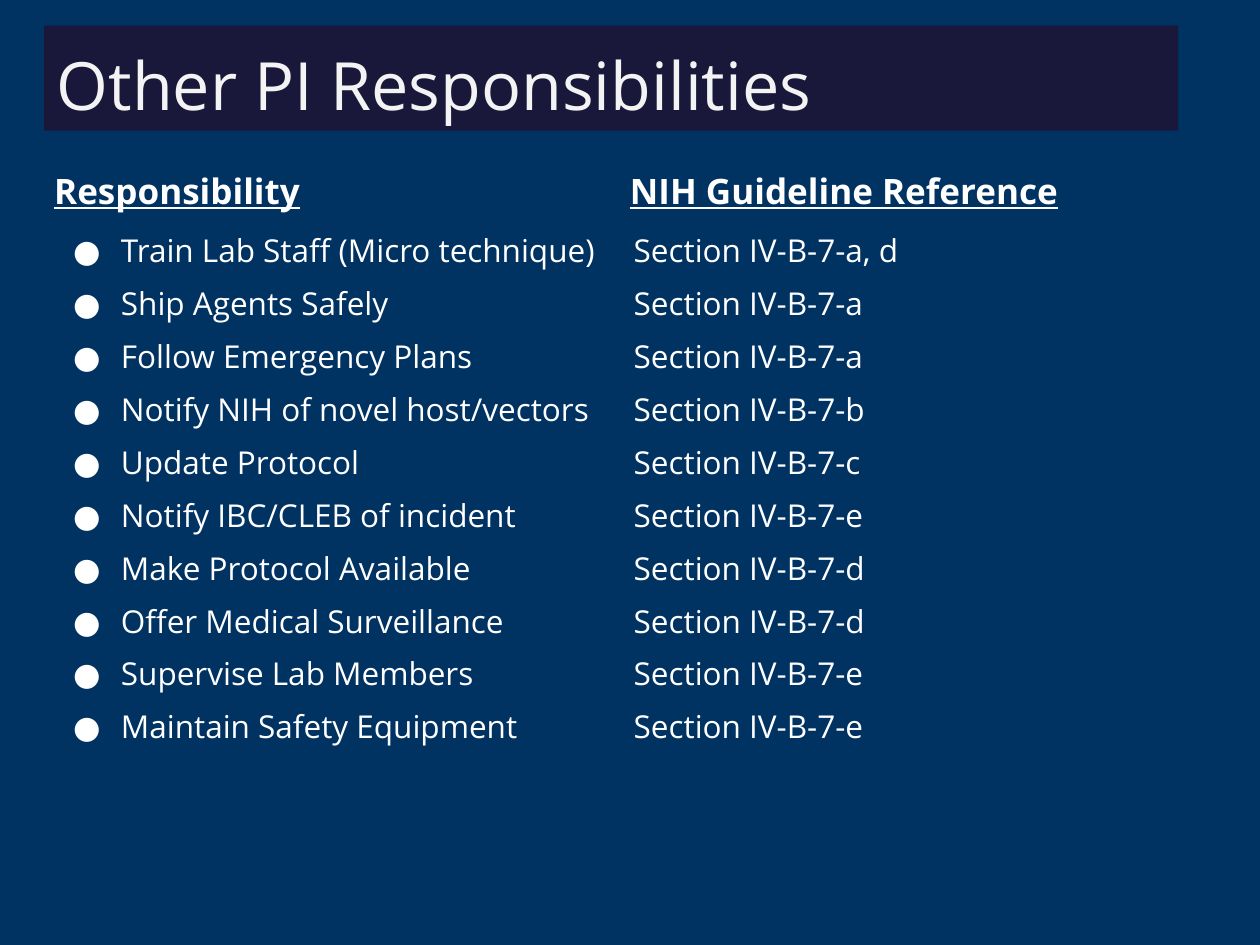
from lxml import etree
from pptx import Presentation
from pptx.dml.color import RGBColor
from pptx.enum.text import MSO_ANCHOR as Anchor, MSO_AUTO_SIZE as AutoSize, PP_ALIGN as Align
from pptx.oxml.ns import qn
from pptx.util import Inches, Pt

NAVY = RGBColor(0x00, 0x32, 0x62)
DARK_PURPLE = RGBColor(0x19, 0x18, 0x3A)
OFF_WHITE = RGBColor(0xF3, 0xF3, 0xF3)
WHITE = RGBColor(0xFF, 0xFF, 0xFF)
FONT = "Open Sans"
NO_STYLE_NO_GRID = "{2D5ABB26-0587-4C30-8999-92F81FD0307C}"

HEADINGS = ("Responsibility", "NIH Guideline Reference")
DUTIES = [
    ("Train Lab Staff (Micro technique)", "Section IV-B-7-a, d"),
    ("Ship Agents Safely", "Section IV-B-7-a"),
    ("Follow Emergency Plans", "Section IV-B-7-a"),
    ("Notify NIH of novel host/vectors", "Section IV-B-7-b"),
    ("Update Protocol", "Section IV-B-7-c"),
    ("Notify IBC/CLEB of incident", "Section IV-B-7-e"),
    ("Make Protocol Available", "Section IV-B-7-d"),
    ("Offer Medical Surveillance", "Section IV-B-7-d"),
    ("Supervise Lab Members", "Section IV-B-7-e"),
    ("Maintain Safety Equipment", "Section IV-B-7-e"),
]


def style_spans(para, size, color, bold=False, underline=False):
    for span in para.runs:
        font = span.font
        font.name, font.size = FONT, Pt(size)
        font.bold, font.underline = bold, underline
        font.color.rgb = color


def add_bullet(para):
    props = para._p.get_or_add_pPr()
    props.set("marL", str(Inches(0.5)))
    props.set("indent", str(Inches(-0.38)))
    color = etree.SubElement(props, qn("a:buClr"))
    etree.SubElement(color, qn("a:srgbClr"), val=str(WHITE))
    etree.SubElement(props, qn("a:buFont"), typeface=FONT)
    etree.SubElement(props, qn("a:buChar"), char="●")


def fill_title(page, left, top, width, height):
    title = page.shapes.title
    title.left, title.top, title.width, title.height = left, top, width, height
    title.fill.solid()
    title.fill.fore_color.rgb = DARK_PURPLE
    frame = title.text_frame
    frame.text = "Other PI Responsibilities"
    frame.auto_size = AutoSize.SHAPE_TO_FIT_TEXT
    frame.vertical_anchor = Anchor.MIDDLE
    para = frame.paragraphs[0]
    para.alignment = Align.LEFT
    para.line_spacing = 1.15
    style_spans(para, 38, OFF_WHITE)


def fill_heading(cell, text):
    cell.text = text
    cell.margin_left = 0
    cell.margin_top = cell.margin_right = cell.margin_bottom = Inches(0.1)
    para = cell.text_frame.paragraphs[0]
    para.line_spacing = 0.9
    style_spans(para, 20, WHITE, bold=True, underline=True)


def fill_entry(cell, text, bulleted):
    cell.text = text
    cell.margin_left = cell.margin_right = Inches(0.03)
    cell.margin_top = cell.margin_bottom = Inches(0.01)
    cell.vertical_anchor = Anchor.BOTTOM
    para = cell.text_frame.paragraphs[0]
    para.line_spacing = 1.15
    if bulleted:
        add_bullet(para)
    style_spans(para, 18, WHITE)


def add_duties_table(page, left, top, widths, row_height):
    row_count = len(DUTIES) + 1
    frame = page.shapes.add_table(
        row_count, len(widths), left, top, sum(widths), row_height * row_count)
    table = frame.table
    table.first_row = table.horz_banding = False
    table._tbl.tblPr.find(qn("a:tableStyleId")).text = NO_STYLE_NO_GRID
    for column, width in zip(table.columns, widths):
        column.width = width
    for cell in table.iter_cells():
        cell.fill.background()
    for column, heading in enumerate(HEADINGS):
        fill_heading(table.cell(0, column), heading)
    for row, entries in enumerate(DUTIES, start=1):
        for column, entry in enumerate(entries):
            fill_entry(table.cell(row, column), entry, bulleted=column == 0)


def main():
    deck = Presentation()
    deck.slide_width, deck.slide_height = Inches(10), Inches(7.5)
    page = deck.slides.add_slide(deck.slide_layouts[5])
    page.background.fill.solid()
    page.background.fill.fore_color.rgb = NAVY
    fill_title(page, Inches(0.35), Inches(0.25), Inches(9), Inches(0.74))
    add_duties_table(page, Inches(0.43), Inches(1.25),
                     (Inches(4.57), Inches(4.4)), Inches(0.42))
    deck.save("out.pptx")


if __name__ == "__main__":
    main()
